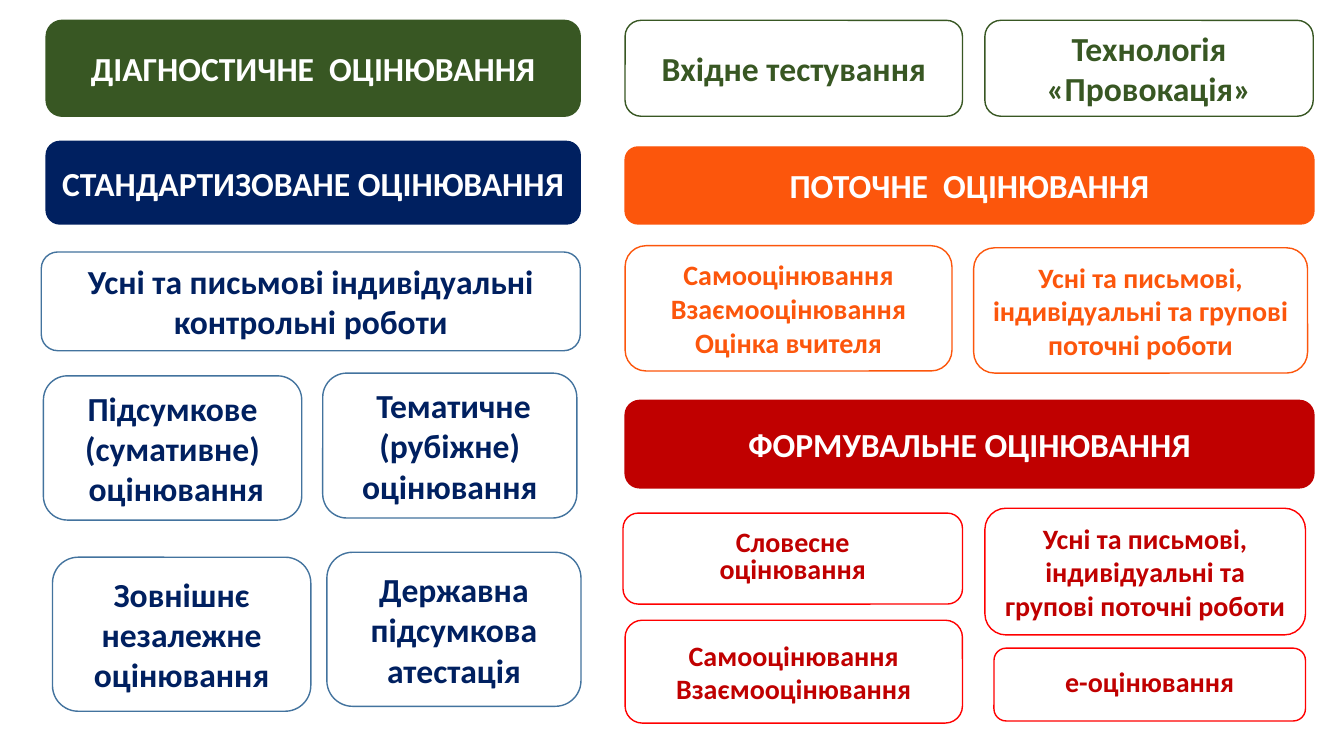
from pptx import Presentation
from pptx import util as u
from pptx.dml.color import RGBColor
from pptx.enum import shapes, text

WHITE, GREEN, NAVY = "FFFFFF", "385723", "002060"
BLUE, ORANGE, RED, BRIGHT = "43739E", "FC560C", "C00000", "FF0000"


def shade(code):
    return RGBColor.from_string(code)


def box(slide, place, words, fill, edge, ink, size, lead=None):
    shape = slide.shapes.add_shape(
        shapes.MSO_SHAPE.ROUNDED_RECTANGLE, *(u.Pt(n) for n in place))
    shape.shadow.inherit = False
    shape.fill.solid()
    shape.fill.fore_color.rgb = shade(fill)
    shape.line.color.rgb = shade(edge)
    shape.line.width = u.Pt(1)
    frame = shape.text_frame
    frame.word_wrap = True
    frame.vertical_anchor = text.MSO_ANCHOR.MIDDLE
    for i, line in enumerate(words.split("\n")):
        para = frame.add_paragraph() if i else frame.paragraphs[0]
        para.alignment = text.PP_ALIGN.CENTER
        if lead:
            para.line_spacing = u.Pt(lead)
        run = para.add_run()
        run.text = line
        run.font.name = "Calibri"
        run.font.size = u.Pt(size)
        run.font.bold = True
        run.font.color.rgb = shade(ink)


def head(slide, place, words, fill):
    box(slide, place, words, fill, fill, WHITE, 24)


def card(slide, place, words, edge, ink, size, lead=None):
    box(slide, place, words, WHITE, edge, ink, size, lead)


def main():
    deck = Presentation()
    deck.slide_width, deck.slide_height = u.Pt(960), u.Pt(540)
    slide = deck.slides.add_slide(deck.slide_layouts[6])
    left, right, top = 33, 446.5, 14.5
    wide, broad = 381.5, 492

    head(slide, (left, top, wide, 68.5), "ДІАГНОСТИЧНЕ  ОЦІНЮВАННЯ", GREEN)
    head(slide, (left, 101, wide, 59), "СТАНДАРТИЗОВАНЕ ОЦІНЮВАННЯ", NAVY)
    head(slide, (right, 105, broad, 55), "ПОТОЧНЕ  ОЦІНЮВАННЯ", ORANGE)
    head(slide, (right, 286, broad, 62.5), "ФОРМУВАЛЬНЕ ОЦІНЮВАННЯ", RED)

    for place, words in (
        ((right, top, 241, 68.5), "Вхідне тестування"),
        ((703.5, top, 234.5, 68.5), "Технологія\n«Провокація»"),
    ):
        card(slide, place, words, GREEN, GREEN, 24)

    for place, words in (
        ((29.5, 180, 385, 70.5),
         "Усні та письмові індивідуальні контрольні роботи"),
        ((31, 268.5, 184.5, 103), "Підсумкове\n(сумативне)\n оцінювання"),
        ((230.5, 266.5, 181.5, 103.5), " Тематичне\n(рубіжне)\nоцінювання"),
        ((37.5, 398, 184.5, 110), "Зовнішнє незалежне оцінювання"),
        ((233.5, 394.5, 181.5, 110), "Державна підсумкова атестація"),
    ):
        card(slide, place, words, BLUE, NAVY, 24)

    group = "Усні та письмові, індивідуальні та групові поточні роботи"
    peers = "Самооцінювання\nВзаємооцінювання"
    card(slide, (right, 175.5, 233.5, 89.5), peers + "\nОцінка вчителя",
         ORANGE, ORANGE, 20)
    card(slide, (695.5, 177, 238.5, 89.5), group, ORANGE, ORANGE, 20)

    for place, words, lead in (
        ((445, 366.5, 242.5, 65), "Словесне\nоцінювання", 19),
        ((703.5, 363, 229, 90.5), group, None),
        ((right, 443, 241, 73.5), peers, None),
        ((710, 463, 222.5, 52), "е-оцінювання", 19),
    ):
        card(slide, place, words, BRIGHT, RED, 20, lead)

    deck.save("out.pptx")


if __name__ == "__main__":
    main()
